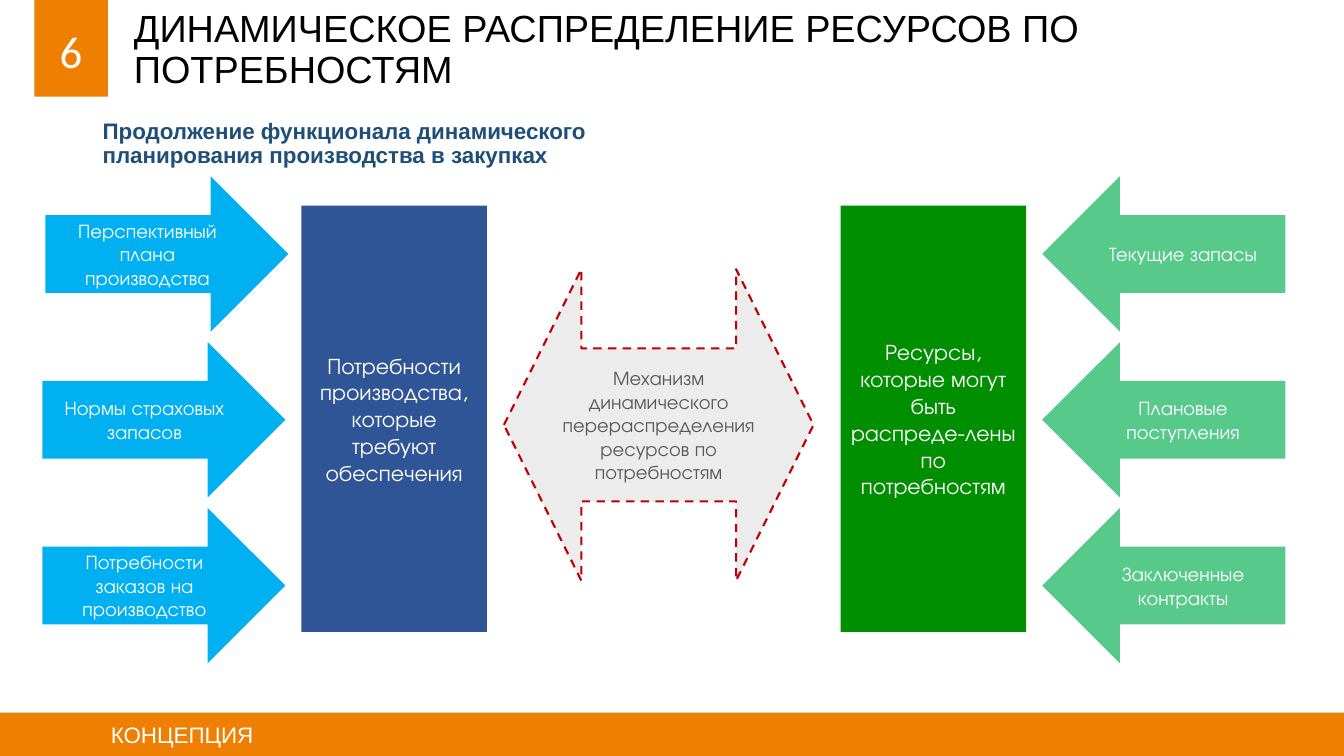
"""Build the slide on dynamic allocation of resources to needs."""
from dataclasses import dataclass
from typing import Optional

from lxml import etree
from pptx import Presentation
from pptx import util as u
from pptx.dml.color import RGBColor
from pptx.enum import dml, shapes, text
from pptx.oxml import ns

COLOURS = {
    "orange": "EF7F00", "black": "000000", "navy": "1F4E79", "white": "FFFFFF",
    "sky": "00B0F0", "blue": "2F5597", "forest": "008F00", "green": "00B050",
    "silver": "E7E6E6", "red": "C00000", "grey": "595959",
}
SLIDE_WIDTH, SLIDE_HEIGHT = u.Inches(13.33), u.Inches(7.5)
KIND = shapes.MSO_SHAPE
LEFT, CENTRE = text.PP_ALIGN.LEFT, text.PP_ALIGN.CENTER
TOP, MIDDLE = text.MSO_ANCHOR.TOP, text.MSO_ANCHOR.MIDDLE
ARROW_TOP, ARROW_STEP = 23.33, 21.93


@dataclass(frozen=True)
class Area:
    """A rectangle in percent of the slide's width and height."""
    left: float
    top: float
    width: float
    height: float


@dataclass(frozen=True)
class Style:
    """The look of a block's text."""
    size: int
    colour: str = "white"
    font: str = "TeX Gyre Adventor"
    bold: bool = False
    align: text.PP_ALIGN = CENTRE
    anchor: text.MSO_ANCHOR = MIDDLE
    spacing: float = 1.0
    before: int = 0
    indent: float = 0.1


@dataclass(frozen=True)
class Block:
    """A preset shape, or a bare text box when it has no kind."""
    area: Area
    words: str = ""
    style: Style = Style(14)
    kind: Optional[shapes.MSO_SHAPE] = None
    fill: str = "white"
    opacity: int = 100
    outline: Optional[str] = None
    adjustments: tuple[float, ...] = ()


ARROW = Style(14)
PILLAR = Style(16)
TITLE = Style(27, "black", "Arial", align=LEFT, spacing=0.9)
SUBTITLE = Style(16, "navy", "Arial", True, LEFT, TOP, 0.9, 10)
NUMBER = Style(32, font="Calibri")
FOOTER = Style(16, font="Arial", align=LEFT, indent=1.1)

FRAME = [
    Block(Area(2.55, 0, 5.48, 12.8), kind=KIND.RECTANGLE, fill="orange"),
    Block(Area(9.23, 0.53, 87.3, 12.4),
          "ДИНАМИЧЕСКОЕ РАСПРЕДЕЛЕНИЕ РЕСУРСОВ ПО ПОТРЕБНОСТЯМ", TITLE),
    Block(Area(6.9, 15.2, 47.25, 9.47),
          "Продолжение функционала динамического планирования производства в закупках",
          SUBTITLE),
    Block(Area(2.55, 4, 5.48, 5.33), "6", NUMBER),
    Block(Area(0, 94.27, 100, 5.73), "КОНЦЕПЦИЯ", FOOTER, KIND.RECTANGLE, "orange"),
]
PILLARS = [
    Block(Area(22.43, 27.2, 13.8, 56.4),
          "Потребности производства, которые требуют обеспечения",
          PILLAR, KIND.RECTANGLE, "blue"),
    Block(Area(62.55, 27.2, 13.8, 56.4),
          "Ресурсы, которые могут быть распреде-лены по потребностям",
          PILLAR, KIND.RECTANGLE, "forest"),
]
MECHANISM = Block(
    Area(37.5, 35.6, 23.03, 41.2),
    "Механизм динамического перераспределения ресурсов по потребностям",
    Style(14, "grey"), KIND.LEFT_RIGHT_ARROW, "silver", 72, "red", (0.491, 0.25))
NEEDS = [
    (3.38, "Перспективный плана производства"),
    (3.15, "Нормы страховых запасов"),
    (3.15, "Потребности заказов на производство"),
]
RESOURCES = [
    (77.55, "Текущие запасы"),
    (77.55, "Плановые поступления"),
    (77.55, "Заключенные контракты"),
]


def arrow_stack(entries: list[tuple[float, str]], kind: shapes.MSO_SHAPE,
                fill: str, opacity: int = 100) -> list[Block]:
    """Stack arrows at an equal step down the slide."""
    return [
        Block(Area(left, ARROW_TOP + row * ARROW_STEP, 18.08, 20.53),
              words, ARROW, kind, fill, opacity)
        for row, (left, words) in enumerate(entries)
    ]


def colour_of(name: str) -> RGBColor:
    """Look up a named colour."""
    return RGBColor.from_string(COLOURS[name])


def place(area: Area) -> tuple[int, int, int, int]:
    """Turn an area's shares into lengths."""
    return (int(SLIDE_WIDTH * area.left / 100), int(SLIDE_HEIGHT * area.top / 100),
            int(SLIDE_WIDTH * area.width / 100), int(SLIDE_HEIGHT * area.height / 100))


def paint(box, block: Block) -> None:
    """Set a shape's fill, opacity, outline and proportions."""
    box.shadow.inherit = False
    box.fill.solid()
    box.fill.fore_color.rgb = colour_of(block.fill)
    if block.opacity < 100:
        colour = box._element.spPr.find(".//" + ns.qn("a:srgbClr"))
        etree.SubElement(colour, ns.qn("a:alpha"), val=str(block.opacity * 1000))
    if block.outline:
        box.line.color.rgb = colour_of(block.outline)
        box.line.width = u.Pt(1.5)
        box.line.dash_style = dml.MSO_LINE.DASH
    else:
        box.line.fill.background()
    for index, value in enumerate(block.adjustments):
        box.adjustments[index] = value


def write(box, words: str, style: Style) -> None:
    """Write one styled paragraph into a box."""
    frame = box.text_frame
    frame.word_wrap = True
    frame.vertical_anchor = style.anchor
    frame.margin_left = u.Inches(style.indent)
    para = frame.paragraphs[0]
    para.text = words
    para.alignment = style.align
    para.line_spacing = style.spacing
    para.space_before = u.Pt(style.before)
    para.font.size = u.Pt(style.size)
    para.font.name = style.font
    para.font.bold = style.bold
    para.font.color.rgb = colour_of(style.colour)


def draw(page, block: Block) -> None:
    """Draw a block on the page."""
    if block.kind is None:
        box = page.shapes.add_textbox(*place(block.area))
    else:
        box = page.shapes.add_shape(block.kind, *place(block.area))
        paint(box, block)
    if block.words:
        write(box, block.words, block.style)


def main() -> None:
    """Build and save the deck."""
    deck = Presentation()
    deck.slide_width, deck.slide_height = SLIDE_WIDTH, SLIDE_HEIGHT
    page = deck.slides.add_slide(deck.slide_layouts[6])
    needs = arrow_stack(NEEDS, KIND.RIGHT_ARROW, "sky")
    resources = arrow_stack(RESOURCES, KIND.LEFT_ARROW, "green", 66)
    for block in [*FRAME, *PILLARS, *needs, *resources, MECHANISM]:
        draw(page, block)
    deck.save("out.pptx")


if __name__ == "__main__":
    main()
